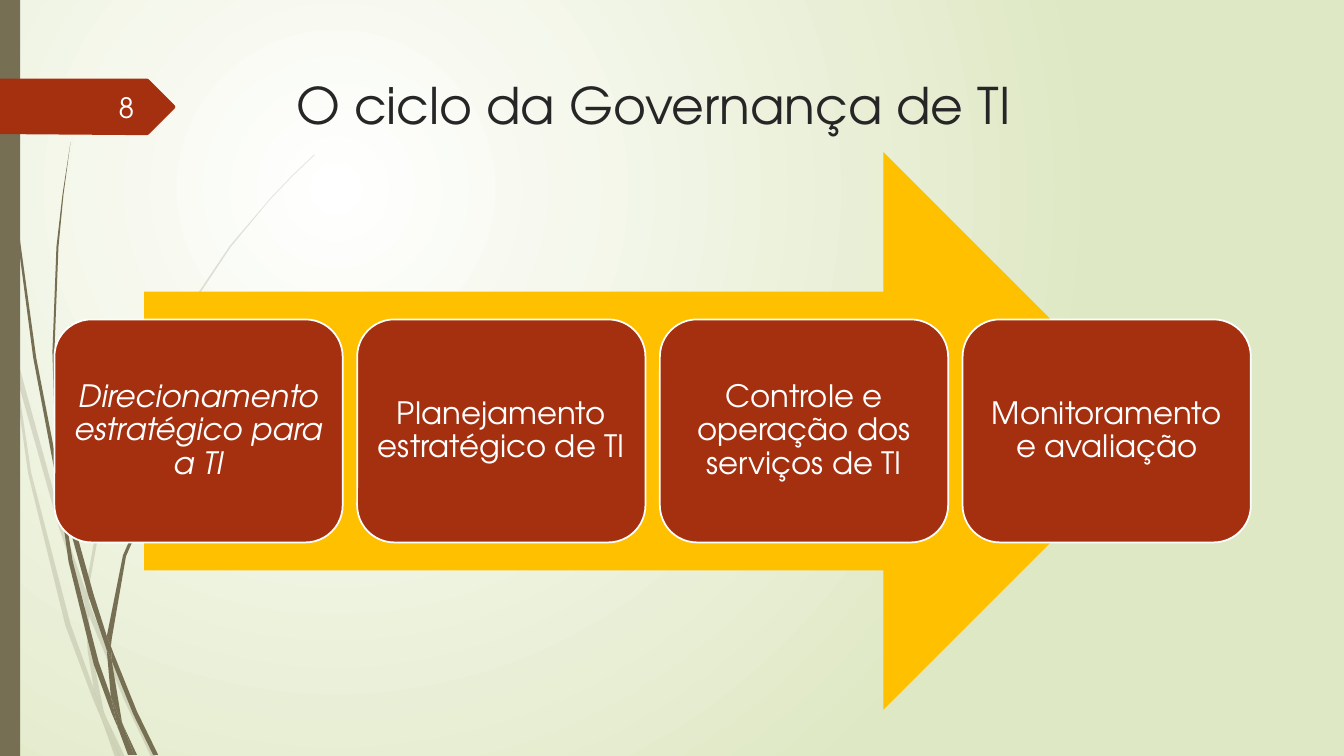
from dataclasses import dataclass

from lxml import etree
from pptx import Presentation
from pptx import util as u
from pptx.dml.color import RGBColor
from pptx.enum import shapes, text
from pptx.oxml import ns


@dataclass(frozen=True)
class Theme:
    font: str = "TeX Gyre Adventor"
    title_size: float = 36
    step_size: float = 22
    number_size: float = 20
    white: str = "FFFFFF"
    background_edge: str = "DFE8C4"
    stem: str = "766F54"
    brick: str = "A53010"
    amber: str = "FFC000"
    ink: str = "262626"
    number: str = "FEFFFF"


THEME = Theme()
OUTLINE_UNIT = u.Pt(0.72)  # outlines are drawn on a grid of 0.72 pt

PALE_STEMS = [
    [(11, 350), (9, 322), (0, 282), (0, 299), (10, 344)],
    [(58, 522), (84, 599), (85, 586), (62, 520), (14, 345), (17, 376)],
    [(92, 607), (88, 596), (88, 610), (123, 694), (150, 751), (155, 751), (127, 692)],
    [(119, 751), (124, 751), (105, 711)],
    [(93, 683), (70, 619), (31, 469), (17, 376), (11, 350), (28, 470), (65, 621),
     (92, 693), (101, 714), (99, 707)],
    [(84, 599), (87, 646), (93, 683), (96, 692), (105, 711), (103, 706), (91, 646),
     (88, 610), (88, 608)],
    [(88, 584), (110, 462), (160, 349), (229, 245), (268, 198), (290, 175), (312, 154),
     (312, 153), (289, 175), (268, 197), (228, 244), (158, 348), (107, 461), (85, 584),
     (85, 586), (88, 596)],
    [(101, 714), (114, 751), (119, 751)],
    [(88, 608), (88, 610), (88, 596), (85, 586), (84, 599)],
    [(96, 692), (93, 683), (99, 707), (101, 714), (119, 751), (105, 711)],
]

DARK_STEMS = [
    [(7, 110), (17, 233), (33, 355), (56, 477), (57, 481), (55, 457), (55, 453),
     (36, 355), (19, 232), (8, 109), (5, 48), (4, 0), (3, 0), (4, 48)],
    [(88, 592), (106, 645), (106, 633), (106, 631), (93, 590), (60, 472), (64, 505)],
    [(113, 649), (110, 641), (111, 656), (132, 708), (152, 749), (157, 749), (136, 706)],
    [(110, 691), (98, 657), (72, 556), (64, 505), (57, 477), (68, 557), (93, 659),
     (111, 708), (117, 722), (116, 717)],
    [(60, 472), (58, 453), (54, 349), (58, 245), (63, 193), (70, 141), (62, 193),
     (56, 245), (52, 349), (55, 449)],
    [(133, 749), (136, 749), (122, 719)],
    [(57, 477), (64, 505), (60, 472), (55, 449), (55, 453)],
    [(111, 633), (125, 552), (158, 476), (205, 406), (231, 374), (245, 359), (261, 344),
     (260, 344), (245, 358), (231, 373), (204, 405), (156, 474), (122, 551), (106, 631),
     (110, 641)],
    [(117, 722), (127, 749), (131, 749)],
    [(106, 645), (110, 691), (116, 706), (122, 719), (121, 716), (111, 656), (109, 651)],
    [(106, 645), (109, 651), (111, 656), (110, 641), (106, 631), (106, 633)],
    [(116, 706), (110, 691), (116, 717), (117, 722), (130, 749), (133, 749), (122, 719)],
]

NUMBER_TAG = [(173, 30), (148, 55), (146, 56), (136, 56), (0, 55), (0, 0), (136, 0),
              (146, 0), (148, 1), (173, 26), (174, 28)]

STEPS = [
    ("Direcionamento estratégico para a TI", True),
    ("Planejamento estratégico de TI", False),
    ("Controle e operação dos serviços de TI", False),
    ("Monitoramento e avaliação", False),
]


def place(shape, box):
    shape.left, shape.top, shape.width, shape.height = (u.Pt(value) for value in box)


def paint(shape, color):
    shape.shadow.inherit = False
    shape.fill.solid()
    shape.fill.fore_color.rgb = RGBColor.from_string(color)
    shape.line.fill.background()


def write(shape, words, size, color, alignment, anchor, italic=None):
    frame = shape.text_frame
    frame.word_wrap = True
    frame.vertical_anchor = anchor
    paragraph = frame.paragraphs[0]
    paragraph.alignment = alignment
    run = paragraph.add_run()
    run.text = words
    run.font.name = THEME.font
    run.font.size = u.Pt(size)
    run.font.italic = italic
    run.font.color.rgb = RGBColor.from_string(color)
    return paragraph


def draw_outline(holder, points, left, top, color):
    builder = holder.build_freeform(*points[0], scale=OUTLINE_UNIT)
    builder.add_line_segments(points[1:], close=True)
    shape = builder.convert_to_shape(u.Pt(left), u.Pt(top))
    paint(shape, color)
    return shape


def paint_background(slide):
    fill = slide.background.fill
    fill.gradient()
    colors = (THEME.white, THEME.background_edge)
    for stop, position, color in zip(fill.gradient_stops, (0, 1), colors):
        stop.position = position
        stop.color.rgb = RGBColor.from_string(color)
    # Radial spread from the upper left
    gradient = slide.element.find(".//" + ns.qn("a:gradFill"))
    gradient.remove(gradient.find(ns.qn("a:lin")))
    radial = etree.SubElement(gradient, ns.qn("a:path"), {"path": "circle"})
    etree.SubElement(radial, ns.qn("a:fillToRect"),
                     {"l": "50000", "t": "50000", "r": "100000", "b": "100000"})


def add_stems(slide, box):
    left, top, width, height = box
    for outlines, opacity in ((PALE_STEMS, 20), (DARK_STEMS, 100)):
        group = slide.shapes.add_group_shape()
        for points in outlines:
            stem = draw_outline(group.shapes, points, left, top, THEME.stem)
            if opacity < 100:
                color = stem.element.spPr.find(".//" + ns.qn("a:srgbClr"))
                etree.SubElement(color, ns.qn("a:alpha"), {"val": str(opacity * 1000)})
    # Side bar
    bar = slide.shapes.add_shape(shapes.MSO_SHAPE.RECTANGLE, u.Pt(left), u.Pt(top),
                                 u.Pt(width), u.Pt(height))
    paint(bar, THEME.stem)


def add_number_tag(slide, box, number):
    left, top, width, height = box
    draw_outline(slide.shapes, NUMBER_TAG, left, top, THEME.brick)
    label = slide.shapes.add_textbox(0, 0, 0, 0)
    place(label, (left + width / 3, top + 5.8, 61.2, height - 11))
    write(label, number, THEME.number_size, THEME.number,
          text.PP_ALIGN.RIGHT, text.MSO_ANCHOR.MIDDLE)


def add_title(slide, box, words):
    place(slide.shapes.title, box)
    write(slide.shapes.title, words, THEME.title_size, THEME.ink,
          text.PP_ALIGN.LEFT, text.MSO_ANCHOR.TOP)


def add_cycle(slide, box):
    left, top, width, height = box
    # Arrow behind the steps
    arrow = slide.shapes.add_shape(shapes.MSO_SHAPE.RIGHT_ARROW, 0, 0, 0, 0)
    place(arrow, (left + 64.1, top, 727.2, height))
    paint(arrow, THEME.amber)
    # Steps, evenly spaced across the box
    step_width, step_height = 205.9, height * 0.4
    pitch = (width - step_width) / (len(STEPS) - 1)
    for index, (words, italic) in enumerate(STEPS):
        step = slide.shapes.add_shape(shapes.MSO_SHAPE.ROUNDED_RECTANGLE, 0, 0, 0, 0)
        place(step, (left + index * pitch, top + height * 0.3, step_width, step_height))
        paint(step, THEME.brick)
        step.line.color.rgb = RGBColor.from_string(THEME.white)
        step.line.width = u.Pt(1.25)
        frame = step.text_frame
        frame.margin_left = frame.margin_right = u.Pt(6.6)
        frame.margin_top = frame.margin_bottom = u.Pt(6.6)
        paragraph = write(step, words, THEME.step_size, THEME.white,
                          text.PP_ALIGN.CENTER, text.MSO_ANCHOR.MIDDLE, italic)
        paragraph.line_spacing = 0.9


def main():
    presentation = Presentation()
    presentation.slide_width, presentation.slide_height = u.Pt(960), u.Pt(540)
    slide = presentation.slides.add_slide(presentation.slide_layouts[5])
    paint_background(slide)
    add_stems(slide, (0, 0, 14.4, 540))
    add_number_tag(slide, (0, 56.2, 125.3, 39.6), "8")
    add_title(slide, (204.5, 49, 702, 100.8), "O ciclo da Governança de TI")
    add_cycle(slide, (38.9, 108.7, 854.6, 398.2))
    presentation.save("out.pptx")


if __name__ == "__main__":
    main()
